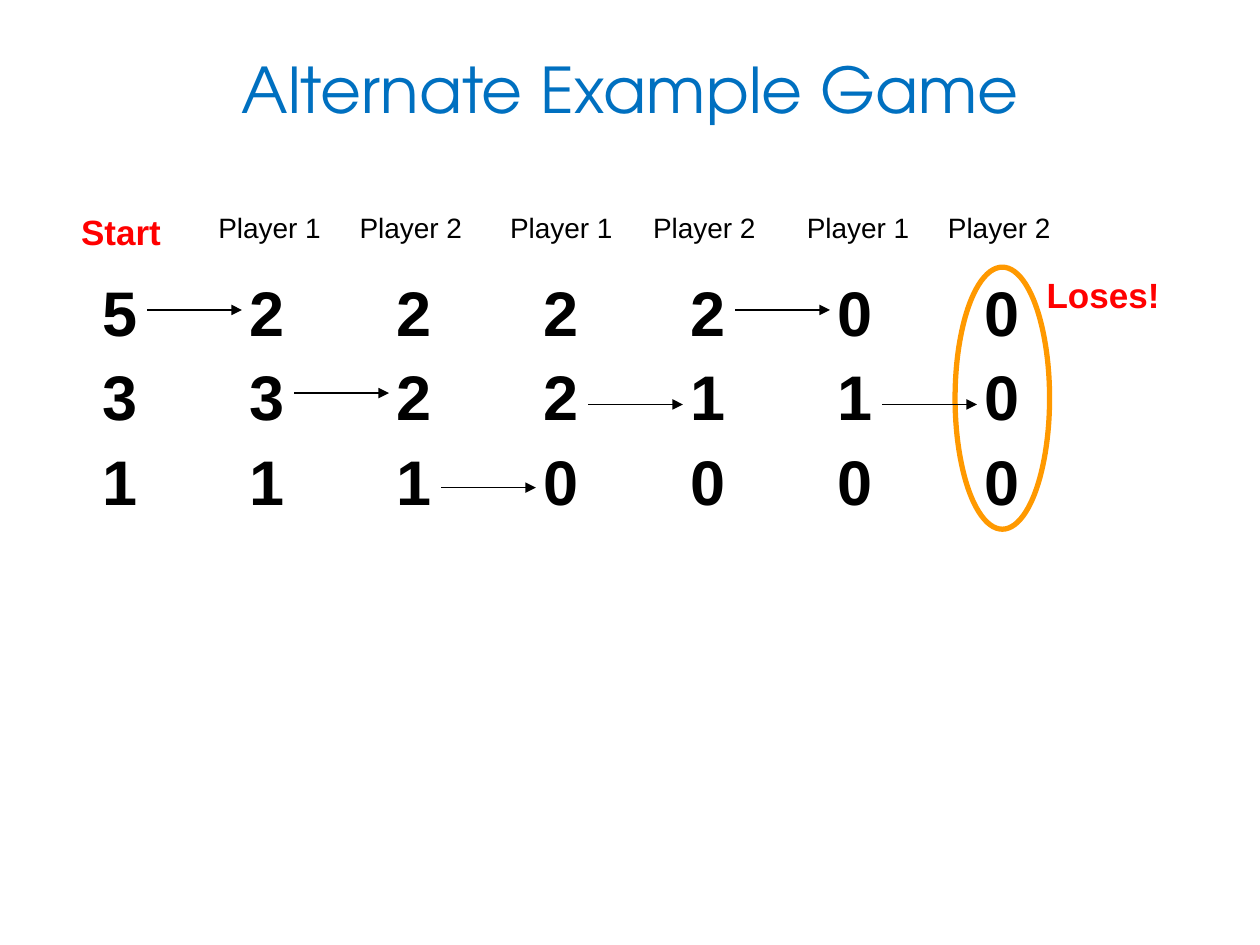
from lxml.etree import SubElement
from pptx import Presentation
from pptx.dml.color import RGBColor
from pptx.enum.shapes import MSO_CONNECTOR as Connector, MSO_SHAPE as Shape
from pptx.enum.text import MSO_ANCHOR as Anchor, PP_ALIGN as Align
from pptx.oxml.ns import qn
from pptx.util import Inches, Pt

COLORS = {"title": "0070C0", "ink": "000000", "alert": "FF0000", "ring": "FF9900"}
TITLE_ONLY = 5
COLUMN_LEFT, COLUMN_STEP = 0.67, 7 / 6
ROW_TOP, ROW_STEP = 2.12, 0.67
HEADER_TOP = 1.62

PILES = [(5, 3, 1), (2, 3, 1), (2, 2, 1), (2, 2, 0), (2, 1, 0), (0, 1, 0), (0, 0, 0)]
PLAYERS = [
    ("Player 1", 1.5, 1.28),
    ("Player 2", 2.75, 1.02),
    ("Player 1", 3.83, 1.25),
    ("Player 2", 5.08, 1.02),
    ("Player 1", 6.17, 1.28),
    ("Player 2", 7.42, 1.02),
]
MOVE_HEIGHTS = [2.46, 3.12, 3.87, 3.21, 2.46, 3.21]


def color(name):
    return RGBColor.from_string(COLORS[name])


def write(frame, text, size=36, font="Arial", ink="ink", bold=False, anchor=Anchor.TOP):
    frame.word_wrap = True
    frame.vertical_anchor = anchor
    paragraph = frame.paragraphs[0]
    paragraph.alignment = Align.CENTER
    run = paragraph.add_run()
    run.text = text
    run.font.size = Pt(size)
    run.font.name = font
    run.font.bold = bold
    run.font.color.rgb = color(ink)


def add_title(slide, text):
    title = slide.shapes.title
    title.left, title.top = Inches(0.75), Inches(0.33)
    title.width, title.height = Inches(8.5), Inches(0.75)
    write(title.text_frame, text, font="TeX Gyre Adventor", ink="title", anchor=Anchor.MIDDLE)


def add_label(slide, text, left, top, width, height, **text_format):
    label = slide.shapes.add_textbox(Inches(left), Inches(top), Inches(width), Inches(height))
    write(label.text_frame, text, **text_format)


def add_piles(slide, turn, piles):
    left = COLUMN_LEFT + turn * COLUMN_STEP
    for row, count in enumerate(piles):
        add_label(slide, str(count), left, ROW_TOP + row * ROW_STEP, 0.56, 0.7, bold=True)


def add_move(slide, turn, height):
    start = COLUMN_LEFT + 0.5 + (turn - 1) * COLUMN_STEP
    move = slide.shapes.add_connector(
        Connector.STRAIGHT, Inches(start), Inches(height), Inches(start + 0.75), Inches(height)
    )
    move.line.color.rgb = color("ink")
    move.line.width = Pt(0.75)
    SubElement(move.line._get_or_add_ln(), qn("a:tailEnd"), type="triangle")
    SubElement(move._element.spPr, qn("a:effectLst"))


def add_ring(slide, left, top, width, height):
    ring = slide.shapes.add_shape(
        Shape.OVAL, Inches(left), Inches(top), Inches(width), Inches(height)
    )
    ring.shadow.inherit = False
    ring.fill.background()
    ring.line.color.rgb = color("ring")
    ring.line.width = Pt(3)


def main():
    deck = Presentation()
    deck.slide_width, deck.slide_height = Inches(10), Inches(7.5)
    slide = deck.slides.add_slide(deck.slide_layouts[TITLE_ONLY])
    add_title(slide, "Alternate Example Game")
    add_ring(slide, 7.58, ROW_TOP, 0.75, 2.08)

    for turn, piles in enumerate(PILES):
        add_piles(slide, turn, piles)
    add_label(slide, "Start", 0.5, HEADER_TOP, 0.92, 0.43, size=20, ink="alert", bold=True)
    for turn, ((player, left, width), height) in enumerate(zip(PLAYERS, MOVE_HEIGHTS), start=1):
        add_label(slide, player, left, HEADER_TOP, width, 0.37, size=16)
        add_move(slide, turn, height)
    add_label(slide, "Loses!", 8.17, ROW_TOP, 1.17, 0.43, size=20, ink="alert", bold=True)

    deck.save("out.pptx")


if __name__ == "__main__":
    main()
